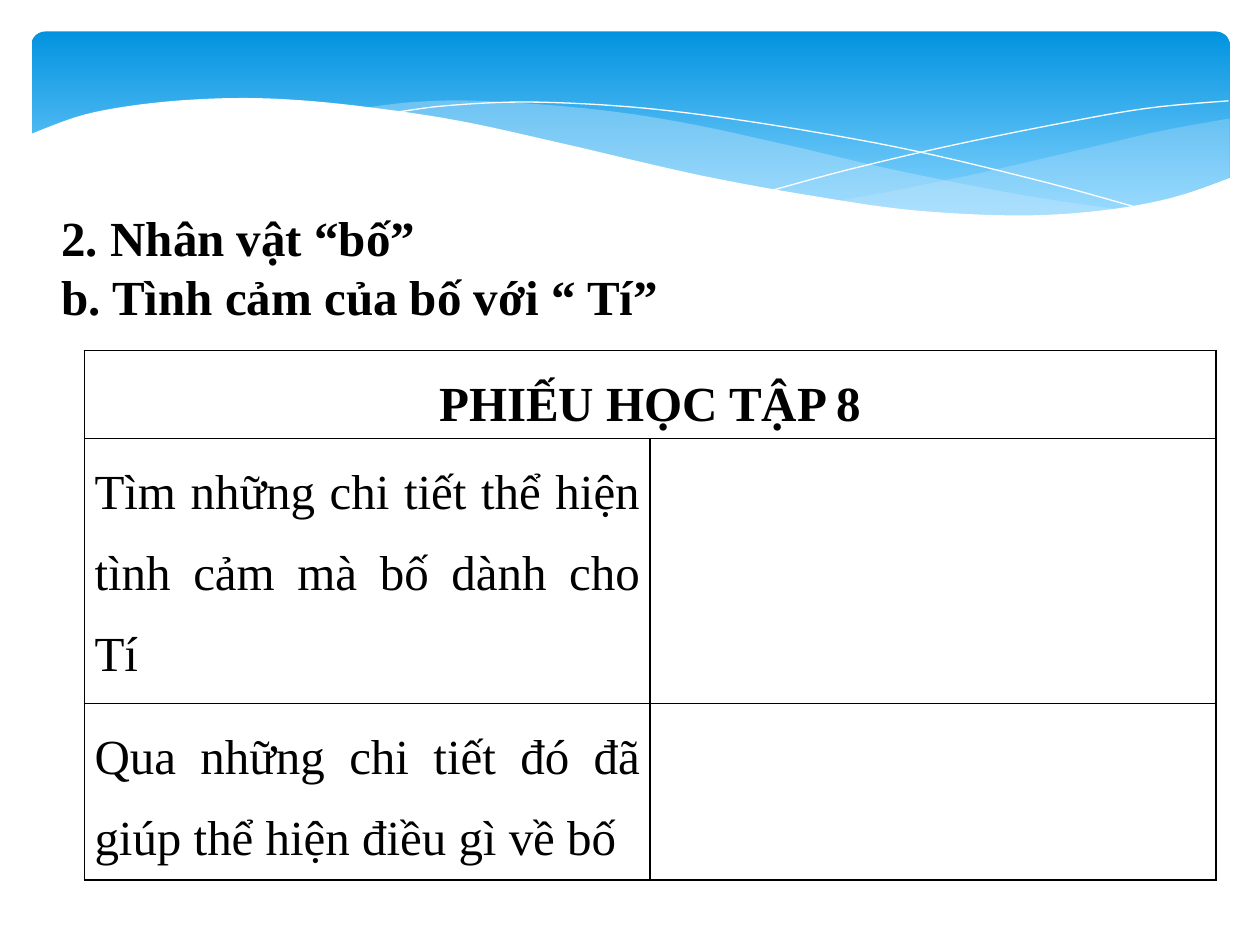
from lxml import etree
from pptx import Presentation
from pptx.dml.color import RGBColor
from pptx.enum.shapes import MSO_SHAPE
from pptx.enum.text import MSO_AUTO_SIZE, PP_ALIGN
from pptx.oxml.ns import qn
from pptx.util import Inches, Pt

ROUNDED = MSO_SHAPE.ROUNDED_RECTANGLE
GROW = MSO_AUTO_SIZE.SHAPE_TO_FIT_TEXT
CENTER = PP_ALIGN.CENTER
JUSTIFY = PP_ALIGN.JUSTIFY

BLACK = RGBColor(0x00, 0x00, 0x00)
WHITE = RGBColor(0xFF, 0xFF, 0xFF)
SKY_DEEP = RGBColor(0x02, 0x93, 0xE0)
SKY_LIGHT = RGBColor(0x83, 0xD3, 0xFE)
WAVE_PALE = RGBColor(0xC6, 0xE7, 0xFC)

BODY = {"name": "Times New Roman", "size": Pt(28), "bold": False}
STRONG = {**BODY, "bold": True}

RIGHT_WAVE_TOP = [(9.76, 0.94), (9.21, 1.04), (8.61, 1.18), (7.79, 1.37), (7.06, 1.52), (6.61, 1.6)]
RIGHT_WAVE_BOTTOM = [(6.61, 1.6), (7.19, 1.67), (7.92, 1.72), (8.54, 1.7), (9.13, 1.62), (9.76, 1.41)]
MIDDLE_WAVE_TOP = [(8.93, 1.67), (8.07, 1.54), (7.06, 1.34), (6.29, 1.16), (5.41, 0.97),
                   (4.65, 0.86), (3.8, 0.8), (3.28, 0.81), (2.86, 0.86)]
MIDDLE_WAVE_BOTTOM = [(2.86, 0.86), (3.62, 0.97), (4.49, 1.16), (5.3, 1.35), (6.18, 1.53),
                      (6.95, 1.65), (7.61, 1.71), (8.18, 1.73), (8.93, 1.67)]
FALLING_LINE = [(3.09, 0.9), (3.53, 0.84), (4.16, 0.81), (4.89, 0.84), (5.56, 0.91),
                (6.36, 1.03), (7.27, 1.2), (8.31, 1.45), (9.07, 1.66)]
RISING_LINE = [(6.13, 1.51), (6.72, 1.35), (7.48, 1.17), (8.36, 0.99), (9.1, 0.86), (9.75, 0.8)]
WHITE_WAVE_TOP = [(9.77, 1.41), (9.3, 1.57), (8.75, 1.67), (8.09, 1.71), (7.26, 1.67),
                  (6.48, 1.56), (5.55, 1.39), (4.47, 1.14), (3.65, 0.96), (2.92, 0.85),
                  (2.3, 0.79), (1.77, 0.78), (1.19, 0.82), (0.67, 0.91), (0.23, 1.07)]
WHITE_WAVE_BASE = [(0.23, 2.24), (9.77, 2.24)]


def smooth_curve(knots, steps=6):
    padded = [knots[0], *knots, knots[-1]]
    points = [knots[0]]
    for before, start, end, after in zip(padded, padded[1:], padded[2:], padded[3:]):
        for step in range(1, steps + 1):
            t = step / steps
            points.append(tuple(
                b + ((c - a) * t + (2 * a - 5 * b + 4 * c - d) * t ** 2
                     + (3 * b - a - 3 * c + d) * t ** 3) / 2
                for a, b, c, d in zip(before, start, end, after)))
    return points


def add_path(page, points, closed):
    corners = [(Inches(x), Inches(y)) for x, y in points]
    builder = page.shapes.build_freeform(*corners[0])
    builder.add_line_segments(corners[1:], close=closed)
    shape = builder.convert_to_shape()
    shape.shadow.inherit = False
    return shape


def add_wave(page, points, color, opacity=100):
    wave = add_path(page, points, True)
    wave.fill.solid()
    wave.fill.fore_color.rgb = color
    wave.line.fill.background()
    if opacity < 100:
        color_element = wave._element.spPr.find(qn("a:solidFill"))[0]
        etree.SubElement(color_element, qn("a:alpha"), val=str(opacity * 1000))


def add_hairline(page, knots):
    hairline = add_path(page, smooth_curve(knots), False)
    hairline.fill.background()
    hairline.line.color.rgb = WHITE
    hairline.line.width = Pt(0)


def add_banner(page):
    banner = page.shapes.add_shape(ROUNDED, Inches(0.25), Inches(0.25), Inches(9.51), Inches(1.56))
    banner.adjustments[0] = 0.07
    banner.shadow.inherit = False
    banner.line.fill.background()
    banner.fill.gradient()
    banner.fill.gradient_angle = 270
    for stop, color, position in zip(banner.fill.gradient_stops, (SKY_DEEP, SKY_LIGHT), (0, 0.9)):
        stop.color.rgb = color
        stop.position = position


def write_text(para, text, font_format):
    span = para.add_run()
    span.text = text
    span.font.color.rgb = BLACK
    for name, value in font_format.items():
        setattr(span.font, name, value)


def add_heading(page, lines):
    box = page.shapes.add_textbox(Inches(0.39), Inches(1.6), Inches(6.06), Inches(1.04))
    frame = box.text_frame
    frame.word_wrap = True
    frame.auto_size = GROW
    for index, line in enumerate(lines):
        para = frame.add_paragraph() if index else frame.paragraphs[0]
        write_text(para, line, STRONG)


def style_cell(cell):
    cell.margin_left = cell.margin_right = Inches(0.08)
    cell.margin_top = cell.margin_bottom = 0
    properties = cell._tc.get_or_add_tcPr()
    for side in ("a:lnL", "a:lnR", "a:lnT", "a:lnB"):
        border = etree.SubElement(properties, qn(side), w=str(Pt(1)))
        fill = etree.SubElement(border, qn("a:solidFill"))
        etree.SubElement(fill, qn("a:srgbClr"), val=str(BLACK))
    cell.fill.background()


def fill_cell(cell, text, alignment, font_format):
    para = cell.text_frame.paragraphs[0]
    para.alignment = alignment
    para.line_spacing = 1.5
    write_text(para, text, font_format)


def add_worksheet(page, title, questions):
    heights = (0.7, 2.1, 1.4)
    frame = page.shapes.add_table(len(heights), 2, Inches(0.67), Inches(2.78),
                                  Inches(8.98), Inches(sum(heights)))
    table = frame.table
    for row, height in zip(table.rows, heights):
        row.height = Inches(height)
    for cell in table.iter_cells():
        style_cell(cell)
    table.cell(0, 0).merge(table.cell(0, 1))
    fill_cell(table.cell(0, 0), title, CENTER, STRONG)
    for index, question in enumerate(questions, start=1):
        fill_cell(table.cell(index, 0), question, JUSTIFY, BODY)


def main():
    deck = Presentation()
    deck.slide_width = Inches(10)
    deck.slide_height = Inches(7.5)
    page = deck.slides.add_slide(deck.slide_layouts[6])

    add_banner(page)
    add_wave(page, smooth_curve(RIGHT_WAVE_TOP) + smooth_curve(RIGHT_WAVE_BOTTOM), WAVE_PALE, 29)
    add_wave(page, smooth_curve(MIDDLE_WAVE_TOP) + smooth_curve(MIDDLE_WAVE_BOTTOM), WAVE_PALE, 40)
    add_hairline(page, FALLING_LINE)
    add_hairline(page, RISING_LINE)
    add_wave(page, smooth_curve(WHITE_WAVE_TOP) + WHITE_WAVE_BASE, WHITE)

    add_heading(page, ["2. Nhân vật “bố”", "b. Tình cảm của bố với “ Tí”"])
    add_worksheet(page, "PHIẾU HỌC TẬP 8", [
        "Tìm những chi tiết thể hiện tình cảm mà bố dành cho Tí",
        "Qua những chi tiết đó đã giúp thể hiện điều gì về bố",
    ])
    deck.save("out.pptx")


if __name__ == "__main__":
    main()
